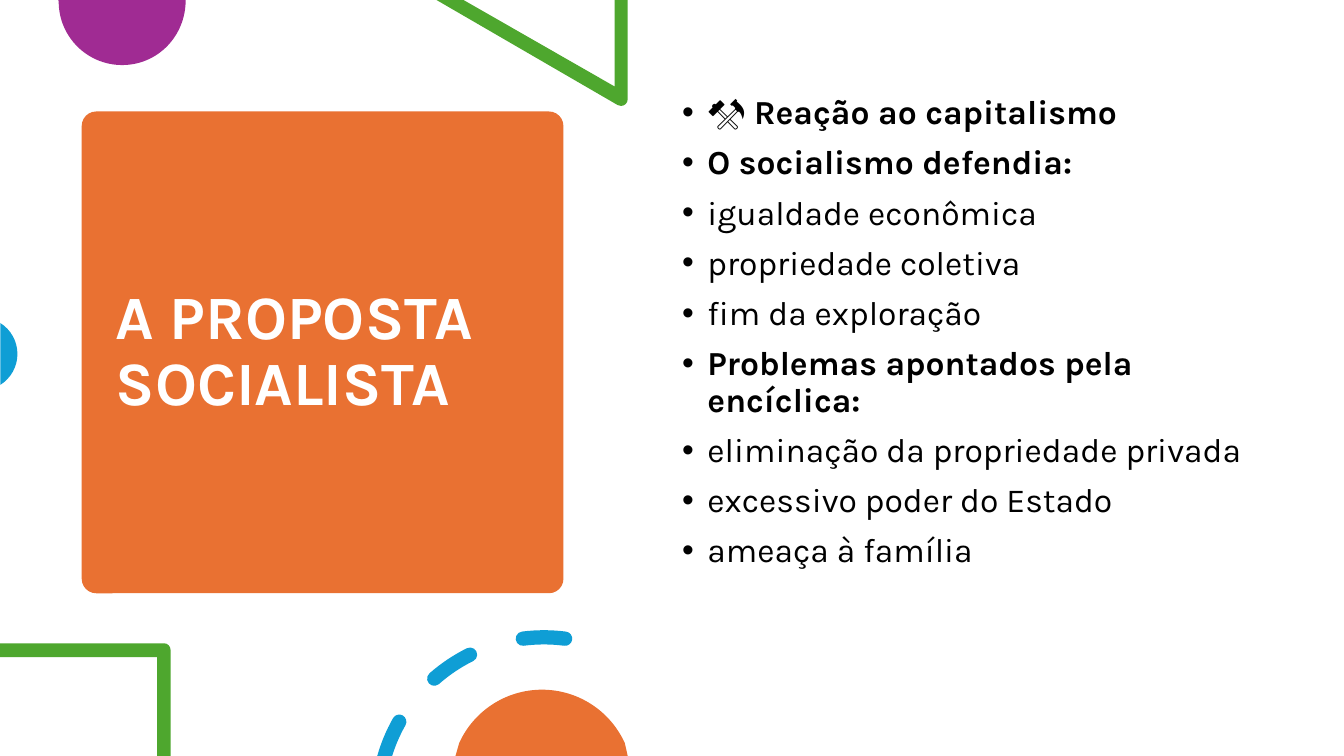
"""Builds the slide about the socialist proposal, with geometric decoration."""
import math

import lxml.etree
import pptx
import pptx.dml.color
import pptx.enum.shapes
import pptx.enum.text
import pptx.oxml.ns
import pptx.util

Cm = pptx.util.Cm
Pt = pptx.util.Pt
RGBColor = pptx.dml.color.RGBColor
qualified = pptx.oxml.ns.qn

TITLE = "A PROPOSTA SOCIALISTA"
POINTS = [
    ("⚒️ Reação ao capitalismo", True),
    ("O socialismo defendia:", True),
    ("igualdade econômica", False),
    ("propriedade coletiva", False),
    ("fim da exploração", False),
    ("Problemas apontados pela encíclica:", True),
    ("eliminação da propriedade privada", False),
    ("excessivo poder do Estado", False),
    ("ameaça à família", False),
]

FONT = "Karla"
WHITE = RGBColor(0xFF, 0xFF, 0xFF)
BLACK = RGBColor(0x00, 0x00, 0x00)
ORANGE = RGBColor(0xE9, 0x71, 0x32)
PURPLE = RGBColor(0xA0, 0x2B, 0x93)
GREEN = RGBColor(0x4E, 0xA7, 0x2E)
BLUE = RGBColor(0x0F, 0x9E, 0xD5)

PANEL = (2.06, 2.81, 12.14, 12.14)
TITLE_BOX = (2.67, 3.1, 10.94, 11.58)
BODY_BOX = (16.94, 2.28, 14.6, 13.59)
INDENT = 0.64

RING_CENTRE = (13.71, 20.25)
RING_RADIUS = 4.19
RING_HALF_WIDTH = 0.18
ROUND_DASHES = [(228.7, 243.6), (262.7, 277.3)]
CUT_DASH = {"outer": 195.9, "inner": 197.3, "end": 209.5}


def arc(centre, radius, start, end):
    count = max(1, math.ceil(abs(end - start) / 90))
    step = math.radians(end - start) / count
    pull = 4 / 3 * math.tan(step / 4)

    def at(angle, along=0):
        return (centre[0] + radius * (math.cos(angle) - along * math.sin(angle)),
                centre[1] + radius * (math.sin(angle) + along * math.cos(angle)))

    angles = [math.radians(start) + step * index for index in range(count + 1)]
    return [at(angles[0])] + [at(first, pull) + at(last, -pull) + at(last)
                              for first, last in zip(angles, angles[1:])]


def cap(angle, turn):
    centre = arc(RING_CENTRE, RING_RADIUS, angle, angle)[0]
    return arc(centre, RING_HALF_WIDTH, angle + turn, angle + turn + 180)[1:]


def dash(outer, inner, end):
    return (arc(RING_CENTRE, RING_RADIUS + RING_HALF_WIDTH, outer, end)
            + cap(end, 0)
            + arc(RING_CENTRE, RING_RADIUS - RING_HALF_WIDTH, end, inner)[1:])


def paint(shape, color):
    shape.fill.solid()
    shape.fill.fore_color.rgb = color
    shape.line.fill.background()
    shape.shadow.inherit = False


def bend(shape, contours):
    outline = next(shape._element.iter(qualified("a:path")))
    nodes = iter(list(outline))
    for contour in contours:
        next(nodes)
        for segment in contour[1:]:
            node = next(nodes)
            if len(segment) == 6:
                curve = lxml.etree.Element(qualified("a:cubicBezTo"))
                node.addprevious(curve)
                for corner in (node, next(nodes), next(nodes)):
                    curve.append(corner[0])
                    outline.remove(corner)
        next(nodes)


def add_outline(page, contours, color):
    builder = None
    for contour in contours:
        corners = [(Cm(segment[index]), Cm(segment[index + 1]))
                   for segment in contour for index in range(0, len(segment), 2)]
        if builder is None:
            builder = page.shapes.build_freeform(*corners[0], scale=1.0)
        else:
            builder.move_to(*corners[0])
        builder.add_line_segments(corners[1:], close=True)
    shape = builder.convert_to_shape()
    bend(shape, contours)
    paint(shape, color)


def add_text_frame(page, place, anchor):
    frame = page.shapes.add_textbox(*map(Cm, place)).text_frame
    frame.word_wrap = True
    frame.vertical_anchor = anchor
    return frame


def write(para, text, size, color, bold):
    para.line_spacing = 0.9
    span = para.add_run()
    span.text = text
    span.font.name = FONT
    span.font.size = Pt(size)
    span.font.bold = bold
    span.font.color.rgb = color


def add_bullet(para):
    properties = para._p.get_or_add_pPr()
    properties.set("marL", str(Cm(INDENT)))
    properties.set("indent", str(-Cm(INDENT)))
    lxml.etree.SubElement(properties, qualified("a:buFont")).set("typeface", "Arial")
    lxml.etree.SubElement(properties, qualified("a:buChar")).set("char", "•")


def main():
    deck = pptx.Presentation()
    deck.slide_width, deck.slide_height = Cm(33.87), Cm(19.05)
    page = deck.slides.add_slide(deck.slide_layouts[6])

    panel = page.shapes.add_shape(
        pptx.enum.shapes.MSO_SHAPE.ROUNDED_RECTANGLE, *map(Cm, PANEL))
    panel.adjustments[0] = 0.03
    paint(panel, ORANGE)

    title = add_text_frame(page, TITLE_BOX, pptx.enum.text.MSO_ANCHOR.MIDDLE)
    write(title.paragraphs[0], TITLE, 44, WHITE, True)

    purple_disc = [(1.47, 0), (4.68, 0)] + arc((3.08, 0.04), 1.6, 0, 180)[1:]
    triangle = ([(15.82, 0), (15.49, 0), (15.49, 2.18), (11.68, 0), (11, 0)]
                + arc((15.65, 2.5), 0.17, 120, 90) + arc((15.65, 2.5), 0.17, 90, 0)[1:])
    blue_disc = arc((-0.48, 8.92), 0.92, -58, 58)
    frame_corner = ([(0, 16.21), (0, 16.56), (3.96, 16.56), (3.96, 19.05), (4.3, 19.05)]
                    + arc((4.13, 16.38), 0.17, 0, -90))
    ring = [dash(**CUT_DASH)]
    ring += [dash(start, start, end) + cap(start, 180) for start, end in ROUND_DASHES]
    orange_disc = [(11.48, 19.05)] + arc((13.66, 19.67), 2.29, 204.3, 335.7) + [(15.82, 19.05)]

    add_outline(page, [purple_disc], PURPLE)
    add_outline(page, [triangle], GREEN)
    add_outline(page, [blue_disc], BLUE)

    body = add_text_frame(page, BODY_BOX, pptx.enum.text.MSO_ANCHOR.TOP)
    for index, (text, bold) in enumerate(POINTS):
        para = body.add_paragraph() if index else body.paragraphs[0]
        add_bullet(para)
        if index:
            para.space_before = Pt(10)
        write(para, text, 24, BLACK, bold)

    add_outline(page, [frame_corner], GREEN)
    add_outline(page, ring, BLUE)
    add_outline(page, [orange_disc], ORANGE)

    deck.save("out.pptx")


if __name__ == "__main__":
    main()
